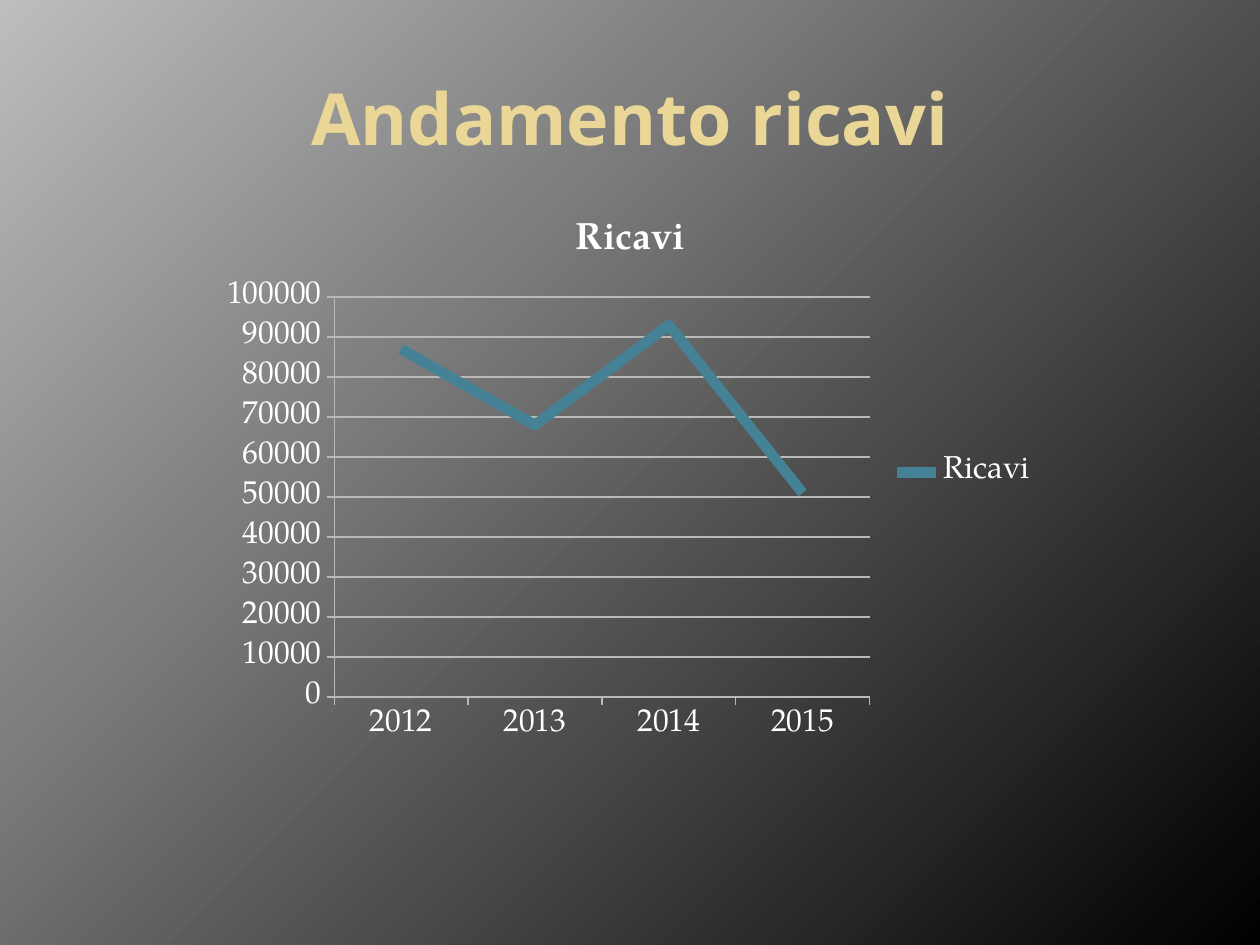
from dataclasses import dataclass

from pptx import Presentation
from pptx.chart.data import CategoryChartData
from pptx.dml.color import RGBColor
from pptx.enum.chart import XL_CHART_TYPE, XL_LEGEND_POSITION, XL_TICK_MARK
from pptx.enum.text import MSO_ANCHOR, PP_ALIGN
from pptx.util import Inches, Pt


@dataclass(frozen=True)
class Theme:
    background_start: RGBColor = RGBColor.from_string("BDBDBD")
    background_end: RGBColor = RGBColor.from_string("000000")
    heading: RGBColor = RGBColor.from_string("EAD696")
    text: RGBColor = RGBColor.from_string("FFFFFF")
    axis: RGBColor = RGBColor.from_string("B9B9B9")
    revenue: RGBColor = RGBColor.from_string("468296")
    heading_font: str = "Noto Sans"
    chart_font: str = "TeX Gyre Pagella"
    heading_size: Pt = Pt(41)
    chart_title_size: Pt = Pt(21.6)
    chart_size: Pt = Pt(18)
    axis_width: Pt = Pt(0.75)
    series_width: Pt = Pt(6)


class SlideBuilder:
    def __init__(self, page, theme):
        self.page = page
        self.theme = theme

    def background(self):
        fill = self.page.background.fill
        fill.gradient()
        fill.gradient_angle = 315
        colors = (self.theme.background_start, self.theme.background_end)
        for position, (stop, color) in enumerate(zip(fill.gradient_stops, colors)):
            stop.position = position
            stop.color.rgb = color

    def style_font(self, font, name, size, color, bold=False):
        font.name = name
        font.size = size
        font.bold = bold
        font.color.rgb = color

    def title(self, text, left, top, width, height):
        box = self.page.shapes.title
        box.left, box.top = Inches(left), Inches(top)
        box.width, box.height = Inches(width), Inches(height)
        frame = box.text_frame
        frame.word_wrap = True
        frame.vertical_anchor = MSO_ANCHOR.MIDDLE
        para = frame.paragraphs[0]
        para.alignment = PP_ALIGN.CENTER
        span = para.add_run()
        span.text = text
        theme = self.theme
        self.style_font(span.font, theme.heading_font, theme.heading_size, theme.heading, True)

    def style_line(self, line, color, width):
        line.color.rgb = color
        line.width = width

    def line_chart(self, name, values_by_year, left, top, width, height):
        theme = self.theme
        data = CategoryChartData()
        data.categories = list(values_by_year)
        data.add_series(name, list(values_by_year.values()))
        chart = self.page.shapes.add_chart(
            XL_CHART_TYPE.LINE_STACKED,
            Inches(left), Inches(top), Inches(width), Inches(height), data,
        ).chart
        self.style_font(chart.font, theme.chart_font, theme.chart_size, theme.text)

        chart.has_title = True
        chart.chart_title.include_in_layout = False
        span = chart.chart_title.text_frame.paragraphs[0].add_run()
        span.text = name
        self.style_font(span.font, theme.chart_font, theme.chart_title_size, theme.text, True)

        chart.has_legend = True
        chart.legend.position = XL_LEGEND_POSITION.RIGHT
        chart.legend.include_in_layout = False

        for axis in (chart.category_axis, chart.value_axis):
            axis.major_tick_mark = XL_TICK_MARK.OUTSIDE
            axis.minor_tick_mark = XL_TICK_MARK.NONE
            self.style_line(axis.format.line, theme.axis, theme.axis_width)
        value_axis = chart.value_axis
        value_axis.minimum_scale = 0
        value_axis.maximum_scale = 100000
        value_axis.major_unit = 10000
        value_axis.has_major_gridlines = True
        self.style_line(value_axis.major_gridlines.format.line, theme.axis, theme.axis_width)

        plot = chart.plots[0]
        plot.vary_by_categories = False
        series = plot.series[0]
        series.smooth = False
        self.style_line(series.format.line, theme.revenue, theme.series_width)


def main():
    deck = Presentation()
    deck.slide_width, deck.slide_height = Inches(10), Inches(7.5)
    page = deck.slides.add_slide(deck.slide_layouts.get_by_name("Title Only"))
    builder = SlideBuilder(page, Theme())
    builder.background()
    builder.title("Andamento ricavi", 0.5, 0.3, 9, 1.25)
    revenue = {"2012": 87000, "2013": 68000, "2014": 93000, "2015": 51000}
    builder.line_chart("Ricavi", revenue, 1.67, 1.53, 6.67, 4.44)
    deck.save("out.pptx")


if __name__ == "__main__":
    main()
